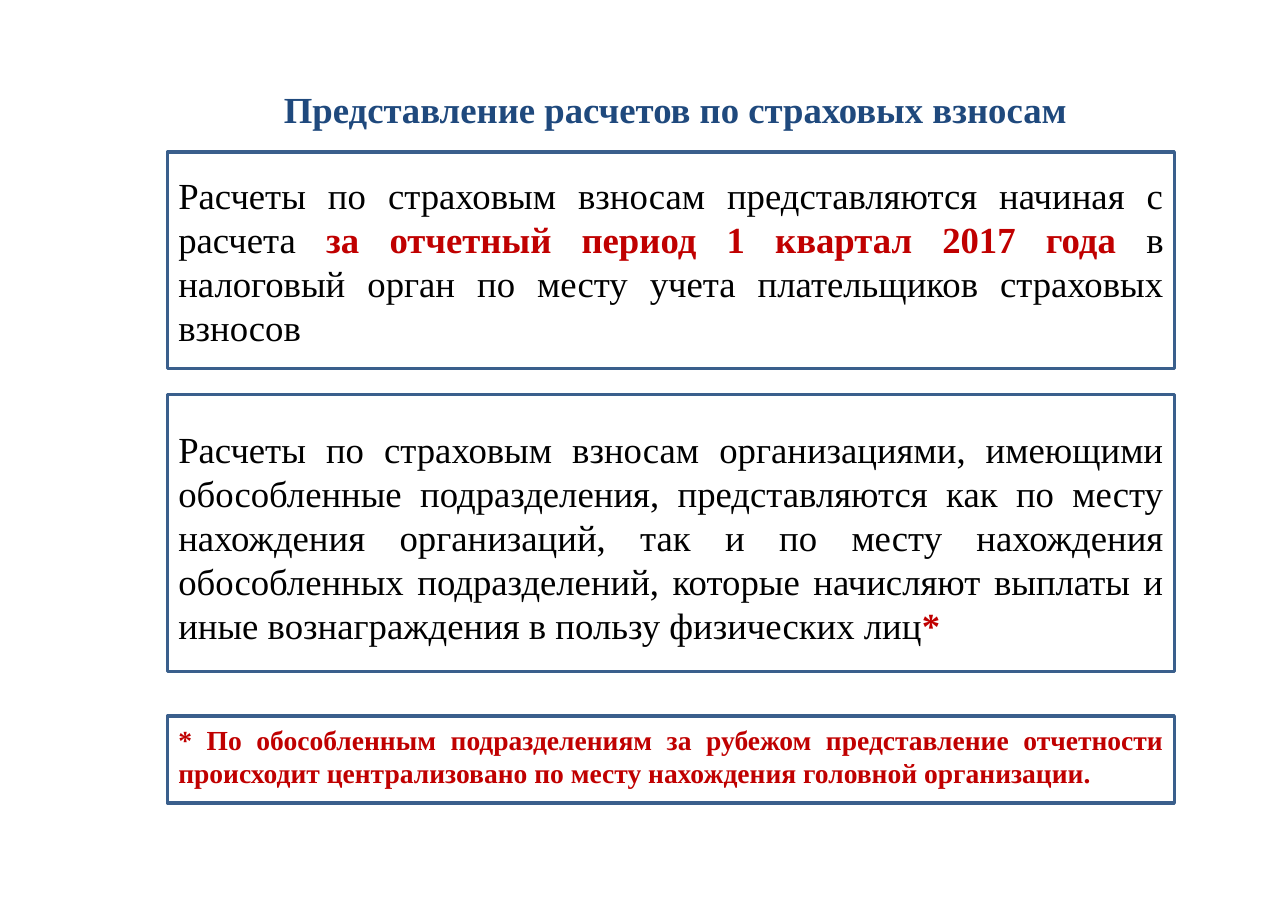
from pptx import Presentation
from pptx.dml.color import RGBColor
from pptx.enum.shapes import MSO_SHAPE as Shape
from pptx.enum.text import MSO_ANCHOR as Anchor, MSO_AUTO_SIZE as Fit, PP_ALIGN as Align
from pptx.util import Inches, Pt

BLACK, RED, BLUE, EDGE = "000000", "C00000", "1F497D", "3A5F8C"


def paint(font, color):
    """Set a font colour from a hex string."""
    font.color.rgb = RGBColor.from_string(color)


def style(para, size, align):
    """Set the face, size and alignment of a paragraph."""
    para.alignment = align
    para.font.name = "Times New Roman"
    para.font.size = Pt(size)


def add_title(slide, text):
    """Place and format the title."""
    title = slide.shapes.title
    title.left, title.top = Inches(1.83), Inches(0.51)
    title.width, title.height = Inches(8.6), Inches(0.63)
    frame = title.text_frame
    frame.auto_size = Fit.NONE
    frame.word_wrap = True
    frame.vertical_anchor = Anchor.MIDDLE
    frame.margin_left = frame.margin_right = Inches(0.11)
    frame.margin_top = frame.margin_bottom = Inches(0.06)
    para = frame.paragraphs[0]
    para.text = text
    para.line_spacing = Pt(52)
    style(para, 24, Align.CENTER)
    para.font.bold = True
    paint(para.font, BLUE)


def add_box(slide, top, height, size, parts, above=0.05, below=0.05):
    """Add an outlined box with justified text made of (text, is_key) parts."""
    box = slide.shapes.add_shape(
        Shape.RECTANGLE, Inches(1.52), Inches(top), Inches(9.14), Inches(height))
    box.shadow.inherit = False
    box.fill.background()
    box.line.color.rgb = RGBColor.from_string(EDGE)
    box.line.width = Pt(2)
    frame = box.text_frame
    frame.word_wrap = True
    frame.vertical_anchor = Anchor.MIDDLE
    frame.margin_top, frame.margin_bottom = Inches(above), Inches(below)
    para = frame.paragraphs[0]
    style(para, size, Align.JUSTIFY)
    for text, key in parts:
        run = para.add_run()
        run.text = text
        run.font.bold = key
        paint(run.font, RED if key else BLACK)


def main():
    """Build the slide and save it."""
    deck = Presentation()
    deck.slide_width, deck.slide_height = Inches(11.69), Inches(8.27)
    slide = deck.slides.add_slide(deck.slide_layouts[5])
    add_title(slide, "Представление расчетов по страховых взносам")
    add_box(slide, 1.38, 1.97, 24, [
        ("Расчеты по страховым взносам представляются начиная с расчета ", False),
        ("за отчетный период 1 квартал 2017 года ", True),
        ("в налоговый орган по месту учета плательщиков страховых взносов", False)])
    add_box(slide, 3.58, 2.52, 24, [
        ("Расчеты по страховым взносам организациями, имеющими обособленные "
         "подразделения, представляются как по месту нахождения организаций, "
         "так и по месту нахождения обособленных подразделений, которые "
         "начисляют выплаты и иные вознаграждения в пользу физических лиц", False),
        ("*", True)], above=0.11)
    add_box(slide, 6.5, 0.79, 18, [
        ("* По обособленным подразделениям за рубежом представление отчетности "
         "происходит централизовано по месту нахождения головной организации.", True)],
        below=0.12)
    deck.save("out.pptx")


if __name__ == "__main__":
    main()
